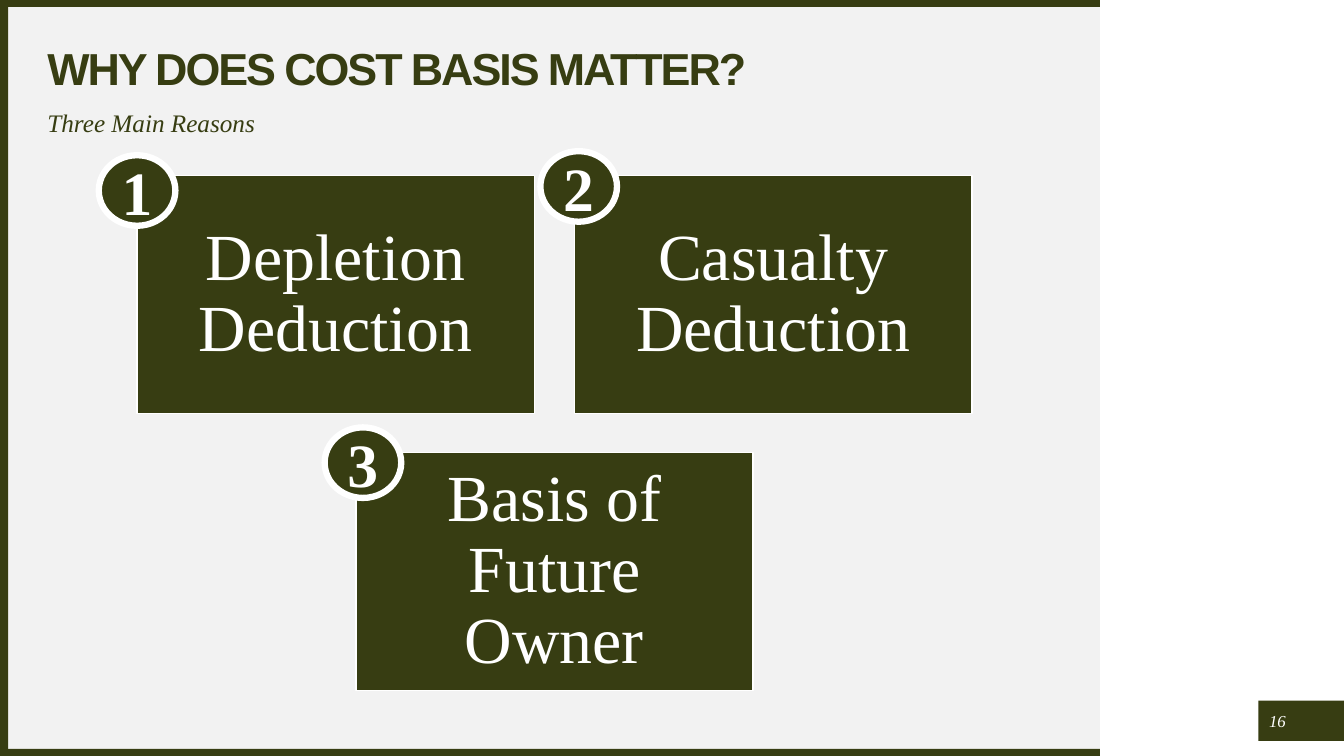
from pptx import Presentation
from pptx.dml.color import RGBColor
from pptx.enum.shapes import MSO_SHAPE
from pptx.enum.text import MSO_ANCHOR, PP_ALIGN
from pptx.util import Inches, Pt

RECTANGLE, OVAL = MSO_SHAPE.RECTANGLE, MSO_SHAPE.OVAL
TOP, MIDDLE = MSO_ANCHOR.TOP, MSO_ANCHOR.MIDDLE
LEFT, CENTER = PP_ALIGN.LEFT, PP_ALIGN.CENTER

COLORS = {"olive": "373D12", "panel": "F2F2F2", "white": "FFFFFF"}
HEADING_FONT, BODY_FONT = "Arial", "Times New Roman"

SLIDE_W, SLIDE_H = 13.33, 7.5
PANEL_W, BORDER = 10.91, 0.07
MARGIN, HEADING_W = 0.47, 10.06
CARD_W, CARD_H = 3.94, 2.36
GRID_LEFT, GRID_TOP = 1.36, 1.74
COLUMN_STEP, ROW_STEP = 4.34, 2.75
BADGE_W, BADGE_H = 0.76, 0.7

# label, grid column, grid row, badge offset from the card's corner
REASONS = [
    ("Depletion Deduction", 0, 0, (-0.38, -0.2)),
    ("Casualty Deduction", 1, 0, (-0.34, -0.24)),
    ("Basis of Future Owner", 0.5, 1, (-0.31, -0.25)),
]


def color(name):
    return RGBColor.from_string(COLORS[name])


def add_block(slide, box, fill="olive", kind=RECTANGLE, outline=0):
    """Add a filled shape; outline is the width of a white line in points."""
    block = slide.shapes.add_shape(kind, *map(Inches, box))
    block.shadow.inherit = False
    block.fill.solid()
    block.fill.fore_color.rgb = color(fill)
    if outline:
        block.line.color.rgb = color("white")
        block.line.width = Pt(outline)
    else:
        block.line.fill.background()
    return block


def write(holder, text, size, ink="white", font=BODY_FONT, align=CENTER,
          anchor=MIDDLE, inset=0, line_spacing=1.0, bold=False, italic=False):
    """Fill a shape or text box with one formatted paragraph; return its run."""
    frame = holder.text_frame
    frame.text = text
    frame.word_wrap = True
    frame.vertical_anchor = anchor
    frame.margin_left = frame.margin_right = Inches(inset)
    frame.margin_top = frame.margin_bottom = Inches(inset)
    paragraph = frame.paragraphs[0]
    paragraph.alignment = align
    paragraph.line_spacing = line_spacing
    run = paragraph.runs[0]
    run.font.name, run.font.size = font, Pt(size)
    run.font.bold, run.font.italic = bold, italic
    run.font.color.rgb = color(ink)
    return run


def add_label(slide, box, text, size, **style):
    return write(slide.shapes.add_textbox(*map(Inches, box)), text, size, **style)


def add_frame(slide):
    """Draw the grey panel, its olive borders and the page number."""
    add_block(slide, (0, 0, PANEL_W, SLIDE_H), "panel")
    add_block(slide, (12.48, 6.95, SLIDE_W - 12.48, 0.4))
    for top in (0, SLIDE_H - BORDER):
        add_block(slide, (0, top, PANEL_W, BORDER))
    add_block(slide, (0, 0, 0.08, SLIDE_H))
    add_label(slide, (12.52, 7, 0.3, 0.3), "16", 12, italic=True)


def add_headings(slide):
    title = add_label(slide, (MARGIN, 0.47, HEADING_W, 0.47),
                      "WHY DOES COST BASIS MATTER?", 32, ink="olive",
                      font=HEADING_FONT, align=LEFT, line_spacing=0.9, bold=True)
    title.font._element.set("spc", "-150")
    add_label(slide, (MARGIN, 1.1, HEADING_W, 0.39), "Three Main Reasons", 18,
              ink="olive", align=LEFT, anchor=TOP, line_spacing=0.9, italic=True)


def add_reason(slide, number, label, column, row, badge_offset):
    left = GRID_LEFT + column * COLUMN_STEP
    top = GRID_TOP + row * ROW_STEP
    card = add_block(slide, (left, top, CARD_W, CARD_H), outline=1)
    write(card, label, 47, inset=0.2, line_spacing=0.9)
    dx, dy = badge_offset
    badge = add_block(slide, (left + dx, top + dy, BADGE_W, BADGE_H),
                      kind=OVAL, outline=4.5)
    write(badge, str(number), 44, bold=True)


def main():
    deck = Presentation()
    deck.slide_width, deck.slide_height = Inches(SLIDE_W), Inches(SLIDE_H)
    slide = deck.slides.add_slide(deck.slide_layouts[6])
    add_frame(slide)
    add_headings(slide)
    for number, reason in enumerate(REASONS, start=1):
        add_reason(slide, number, *reason)
    deck.save("out.pptx")


if __name__ == "__main__":
    main()
